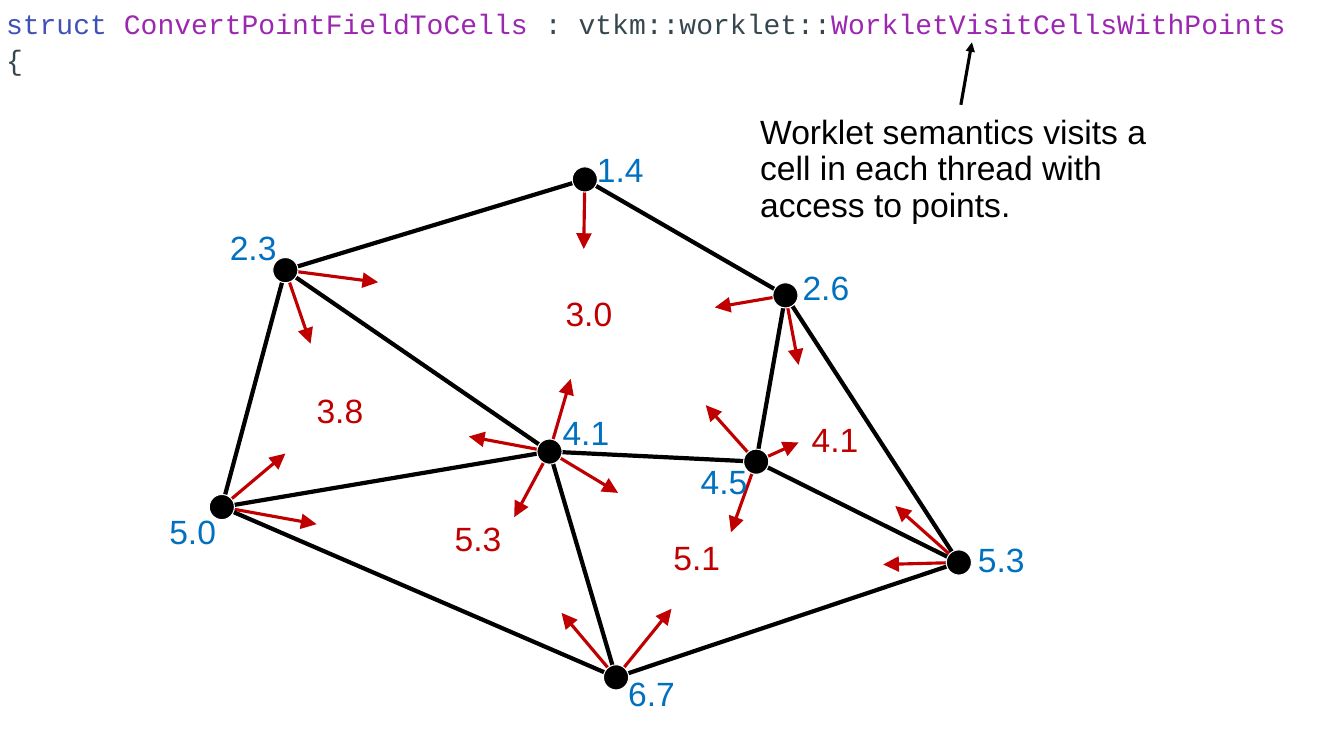
import pptx
import pptx.util
import pptx.dml.color
import pptx.enum.shapes
import pptx.enum.text
from lxml import etree
from pptx.util import Inches

COLORS = {
    "ink": "000000", "paper": "FFFFFF", "value": "0070C0", "flow": "C00000",
    "keyword": "3F51B5", "name": "9C27B0", "code": "37474F",
}
DOT = 0.25

# node: centre, top left of its label, value, tips of the arrows leaving it
NODES = {
    "top": ((5.8, 1.78), (5.79, 1.42), "1.4", [(5.79, 2.47)]),
    "left": ((2.83, 2.68), (2.15, 2.19), "2.3", [(3.08, 3.41), (3.75, 2.8)]),
    "right": ((7.79, 2.93), (7.83, 2.59), "2.6", [(7.92, 3.62), (7.09, 3.05)]),
    "mid": ((5.45, 4.48), (5.45, 4.03), "4.1",
            [(5.1, 5.13), (6.13, 4.89), (4.65, 4.33), (5.66, 3.76)]),
    "inner": ((7.5, 4.58), (6.82, 4.51), "4.5",
              [(7.25, 5.28), (7.92, 4.39), (7, 4.02)]),
    "west": ((2.2, 5.03), (1.55, 5.01), "5.0", [(3.14, 5.2), (2.83, 4.5)]),
    "east": ((9.51, 5.58), (9.57, 5.29), "5.3", [(8.76, 5.6), (8.88, 5.02)]),
    "south": ((6.11, 6.72), (6.1, 6.62), "6.7", [(6.66, 6.04), (5.57, 6.08)]),
}
EDGES = [
    ("top", "right"), ("right", "inner"), ("mid", "inner"), ("west", "mid"),
    ("left", "mid"), ("left", "west"), ("left", "top"), ("south", "east"),
    ("inner", "east"), ("east", "right"), ("south", "mid"), ("west", "south"),
]
CELLS = [
    ((5.48, 2.85), "3.0"), ((3.01, 3.81), "3.8"), ((4.38, 5.08), "5.3"),
    ((6.55, 5.27), "5.1"), ((7.92, 4.1), "4.1"),
]
CODE = [
    [("struct ", "keyword"), ("ConvertPointFieldToCells", "name"),
     (" : vtkm::worklet::", "code"), ("WorkletVisitCellsWithPoints", "name")],
    [("{", "code")],
]


class Board:
    def __init__(self, slide):
        self.slide = slide

    def color(self, key):
        return pptx.dml.color.RGBColor.from_string(COLORS[key])

    def line(self, start, end, color, width, head=None):
        """Draw a straight line; head is the arrowhead size, if any."""
        link = self.slide.shapes.add_connector(
            pptx.enum.shapes.MSO_CONNECTOR.STRAIGHT,
            *(Inches(n) for n in (*start, *end)))
        link.line.color.rgb = self.color(color)
        link.line.width = pptx.util.Pt(width)
        props = link._element.spPr
        if head:
            tag = pptx.oxml.ns.qn("a:tailEnd")
            etree.SubElement(link.line._get_or_add_ln(), tag,
                             type="triangle", w=head, len=head)
        etree.SubElement(props, pptx.oxml.ns.qn("a:effectLst"))

    def dot(self, center):
        left, top = (Inches(n - DOT / 2) for n in center)
        dot = self.slide.shapes.add_shape(
            pptx.enum.shapes.MSO_SHAPE.OVAL, left, top, Inches(DOT), Inches(DOT))
        dot.shadow.inherit = False
        dot.fill.solid()
        dot.fill.fore_color.rgb = self.color("ink")
        dot.line.color.rgb = self.color("paper")
        dot.line.width = pptx.util.Pt(0.75)

    def text(self, spot, size, lines, wrap=True, font="Arial", points=24,
             space=0.9, pad=(0.13, 0.1)):
        """Write lines, each a list of (words, color) runs."""
        box = self.slide.shapes.add_textbox(*(Inches(n) for n in (*spot, *size)))
        frame = box.text_frame
        frame.word_wrap = wrap
        frame.vertical_anchor = pptx.enum.text.MSO_ANCHOR.MIDDLE
        frame.margin_left = frame.margin_right = Inches(pad[0])
        frame.margin_top = frame.margin_bottom = Inches(pad[1])
        frame.text = "\n".join("" for _ in lines)
        for para, runs in zip(frame.paragraphs, lines):
            para.line_spacing = space
            for words, color in runs:
                run = para.add_run()
                run.text = words
                run.font.name = font
                run.font.size = pptx.util.Pt(points)
                run.font.color.rgb = self.color(color)

    def label(self, spot, value, color):
        self.text(spot, (0.73, 0.57), [[(value, color)]], wrap=False)


def main():
    deck = pptx.Presentation()
    deck.slide_width, deck.slide_height = Inches(13.33), Inches(7.5)
    board = Board(deck.slides.add_slide(deck.slide_layouts[6]))

    board.text((0, 0), (13.58, 0.79), CODE, font="Courier New", points=20,
               space=1.07, pad=(0.06, 0.06))
    note = "Worklet semantics visits a cell in each thread with access to points."
    board.text((7.41, 1.04), (4.23, 1.29), [[(note, "ink")]])

    for center, _, _, tips in NODES.values():
        for tip in tips:
            board.line(center, tip, "flow", 2.25, "lg")
    for start, end in EDGES:
        board.line(NODES[start][0], NODES[end][0], "ink", 3)
    for center, _, _, _ in NODES.values():
        board.dot(center)
    for _, spot, value, _ in NODES.values():
        board.label(spot, value, "value")
    for spot, value in CELLS:
        board.label(spot, value, "flow")
    board.line((9.53, 1.04), (9.64, 0.42), "ink", 2.25, "med")

    deck.save("out.pptx")


if __name__ == "__main__":
    main()
